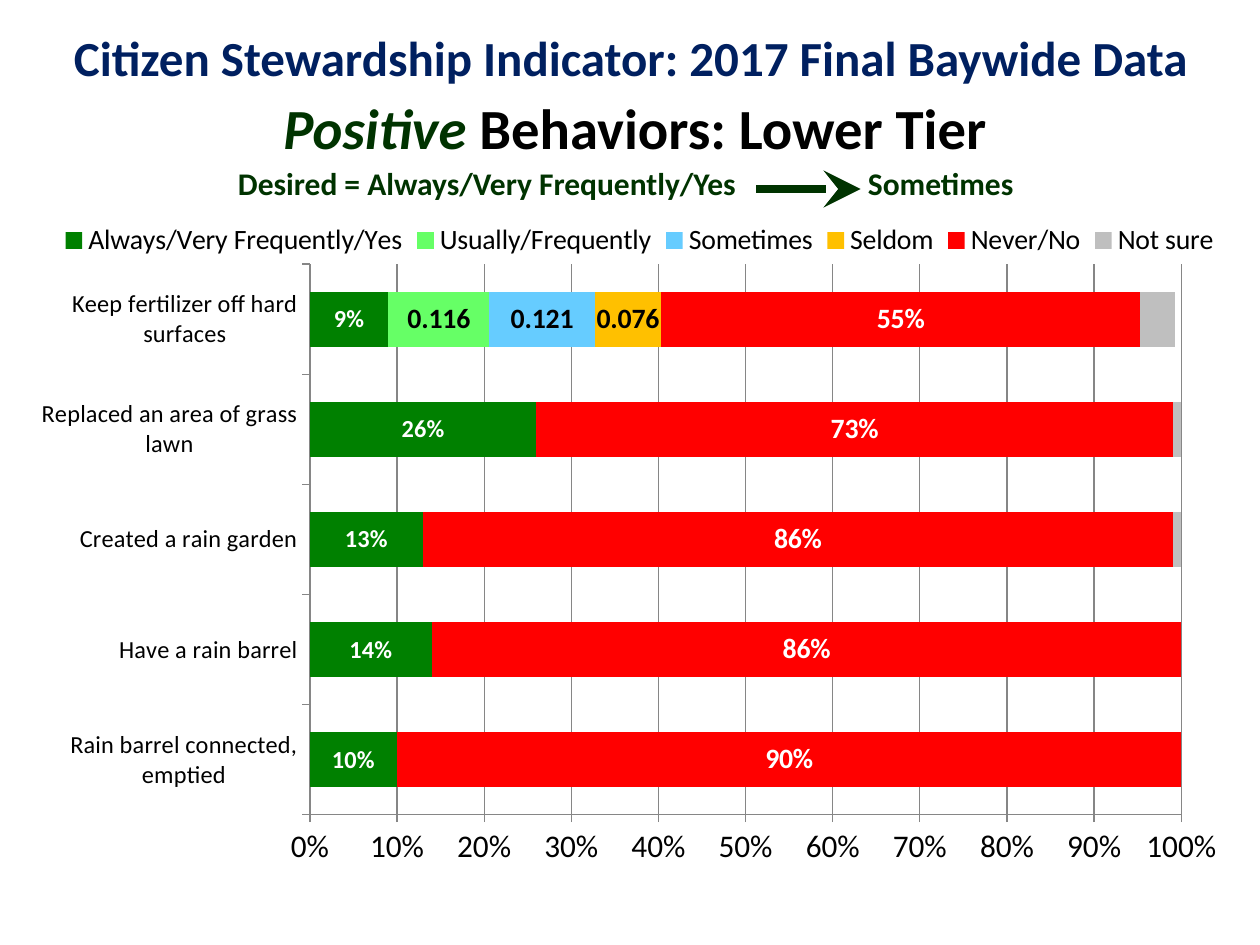
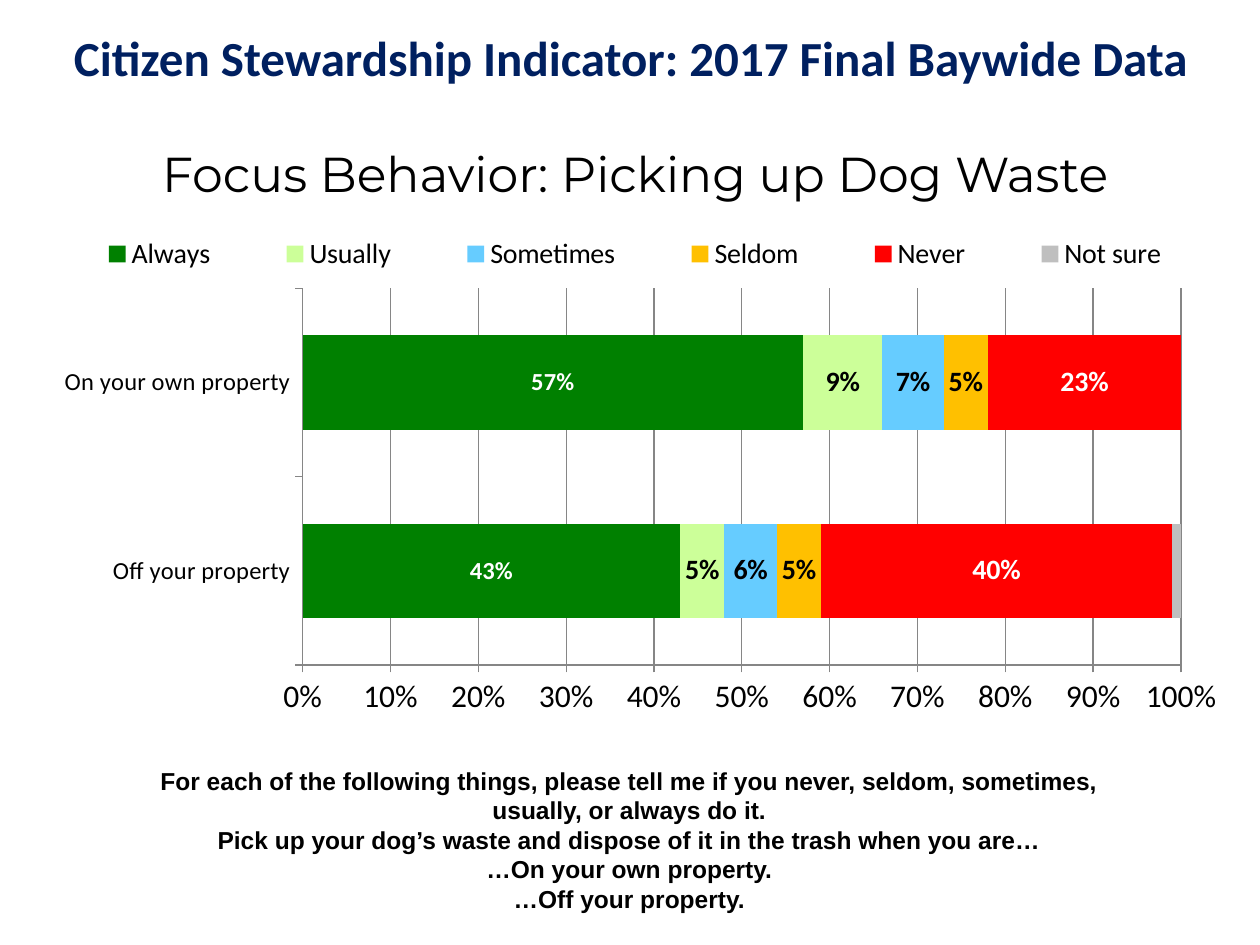
from dataclasses import dataclass

from lxml import etree
from pptx import Presentation
from pptx import util as u
from pptx.chart.chart import Chart
from pptx.chart.data import CategoryChartData
from pptx.dml.color import RGBColor
from pptx.enum import chart as ch, shapes, text
from pptx.oxml import ns
from pptx.slide import Slide

INK = {
    "black": "000000",
    "white": "FFFFFF",
    "navy": "002060",
    "pine": "003300",
    "green": "008000",
    "mint": "66FF66",
    "lime": "CCFF99",
    "sky": "66CCFF",
    "gold": "FFC000",
    "red": "FF0000",
    "gray": "BFBFBF",
    "rule": "868686",
}


@dataclass
class Run:
    words: str
    size: float
    ink: str = "black"
    face: str = "Calibri"
    bold: bool = True
    slant: bool = False


@dataclass
class Box:
    left: float
    top: float
    width: float
    height: float


@dataclass
class Label:
    size: int
    ink: str
    form: str = "0%"


@dataclass
class Series:
    name: str
    vals: list[float | None]
    ink: str
    label: Label | None = None


@dataclass
class Graph:
    box: Box
    plot: Box
    key: Box
    cats: list[str]
    rows: list[Series]


HEAD = Run("Citizen Stewardship Indicator: 2017 Final Baywide Data", 28, "navy")
LEAD = Label(14, "white")
DARK = Label(16, "black")
PLAIN = Label(16, "black", "General")
LIGHT = Label(16, "white")

TIER = Graph(
    Box(0.33, 1.67, 9.42, 5.33),
    Box(0.22, 0.08, 0.74, 0.82),
    Box(0, 0.01, 1, 0.07),
    [
        "Rain barrel connected, emptied",
        "Have a rain barrel",
        "Created a rain garden",
        "Replaced an area of grass lawn",
        "Keep fertilizer off hard surfaces",
    ],
    [
        Series("Always/Very Frequently/Yes", [0.1, 0.14, 0.13, 0.26, 0.09], "green", LEAD),
        Series("Usually/Frequently", [None] * 4 + [0.116], "mint", PLAIN),
        Series("Sometimes", [None] * 4 + [0.121], "sky", PLAIN),
        Series("Seldom", [None] * 4 + [0.076], "gold", PLAIN),
        Series("Never/No", [0.9, 0.86, 0.86, 0.73, 0.55], "red", LIGHT),
        Series("Not sure", [0, 0, 0.01, 0.01, 0.04], "gray"),
    ],
)

WASTE = Graph(
    Box(0.33, 1.7, 9.42, 4.21),
    Box(0.22, 0.14, 0.74, 0.71),
    Box(0, 0.03, 1, 0.09),
    ["Off your property", "On your own property"],
    [
        Series("Always", [0.43, 0.57], "green", LEAD),
        Series("Usually", [0.05, 0.09], "lime", DARK),
        Series("Sometimes", [0.06, 0.07], "sky", DARK),
        Series("Seldom", [0.05, 0.05], "gold", DARK),
        Series("Never", [0.4, 0.23], "red", LIGHT),
        Series("Not sure", [0.01, 0], "gray"),
    ],
)

ASK = [
    "For each of the following things, please tell me if you never, seldom, sometimes,",
    "usually, or always do it.",
    "Pick up your dog’s waste and dispose of it in the trash when you are…",
    "…On your own property.",
    "…Off your property.",
]


def tint(name: str) -> RGBColor:
    return RGBColor.from_string(INK[name])


def place(box: Box) -> list[u.Length]:
    return [u.Inches(n) for n in (box.left, box.top, box.width, box.height)]


def style(font, size: float, ink: str = "black", face: str = "Calibri", bold: bool = False) -> None:
    font.size = u.Pt(size)
    font.name = face
    font.bold = bold
    font.color.rgb = tint(ink)


def write(
    slide: Slide, box: Box, lines: list[list[Run]], mid: bool = False, stop: float | None = None
) -> None:
    shape = slide.shapes.add_textbox(*place(box))
    frame = shape.text_frame
    frame.word_wrap = True
    if mid:
        frame.vertical_anchor = text.MSO_ANCHOR.MIDDLE
    for i, line in enumerate(lines):
        para = frame.paragraphs[0] if i == 0 else frame.add_paragraph()
        para.alignment = text.PP_ALIGN.CENTER if stop is None else text.PP_ALIGN.LEFT
        for part in line:
            run = para.add_run()
            run.text = part.words
            style(run.font, part.size, part.ink, part.face, part.bold)
            run.font.italic = part.slant
    if stop is not None:
        for props in shape.element.iter(ns.qn("a:pPr")):
            tabs = etree.SubElement(props, ns.qn("a:tabLst"))
            tab = etree.SubElement(tabs, ns.qn("a:tab"))
            tab.set("pos", str(u.Inches(stop)))
            tab.set("algn", "l")


def layout(box: Box, inner: bool = False) -> etree._Element:
    root = etree.Element(ns.qn("c:layout"))
    man = etree.SubElement(root, ns.qn("c:manualLayout"))
    tags = [("layoutTarget", "inner")] if inner else []
    tags += [("xMode", "edge"), ("yMode", "edge")]
    tags += [("x", box.left), ("y", box.top), ("w", box.width), ("h", box.height)]
    for tag, val in tags:
        etree.SubElement(man, ns.qn(f"c:{tag}")).set("val", str(val))
    return root


def arrange(chart: Chart, graph: Graph) -> None:
    area = chart.element.find(".//" + ns.qn("c:plotArea"))
    key = chart.element.find(".//" + ns.qn("c:legend"))
    for node in (area, key):
        for old in node.findall(ns.qn("c:layout")):
            node.remove(old)
    area.insert(0, layout(graph.plot, True))
    key.find(ns.qn("c:legendPos")).addnext(layout(graph.key))


def draw(slide: Slide, graph: Graph) -> None:
    data = CategoryChartData(number_format="0%")
    data.categories = graph.cats
    for row in graph.rows:
        data.add_series(row.name, row.vals)
    kind = ch.XL_CHART_TYPE.BAR_STACKED
    chart = slide.shapes.add_chart(kind, *place(graph.box), data).chart
    style(chart.font, 18)
    chart.has_title = False
    chart.has_legend = True
    chart.legend.position = ch.XL_LEGEND_POSITION.TOP
    chart.legend.include_in_layout = False
    style(chart.legend.font, 16)
    plot = chart.plots[0]
    plot.gap_width = 100
    plot.overlap = 100
    plot.vary_by_categories = False
    for row, bar in zip(graph.rows, plot.series):
        bar.format.fill.solid()
        bar.format.fill.fore_color.rgb = tint(row.ink)
        if row.label:
            tag = bar.data_labels
            tag.show_value = True
            tag.position = ch.XL_LABEL_POSITION.CENTER
            tag.number_format = row.label.form
            tag.number_format_is_linked = False
            style(tag.font, row.label.size, row.label.ink, bold=True)
    cat, val = chart.category_axis, chart.value_axis
    for axis, size in ((cat, 14), (val, 18)):
        axis.major_tick_mark = ch.XL_TICK_MARK.OUTSIDE
        axis.format.line.color.rgb = tint("rule")
        style(axis.tick_labels.font, size)
    cat.has_major_gridlines = False
    val.minimum_scale = 0
    val.maximum_scale = 1
    val.major_unit = 0.1
    val.has_major_gridlines = True
    val.major_gridlines.format.line.color.rgb = tint("rule")
    val.tick_labels.number_format = "0%"
    val.tick_labels.number_format_is_linked = False
    arrange(chart, graph)


def arrow(slide: Slide, left: float, right: float, top: float) -> None:
    ends = [u.Inches(n) for n in (left, top, right, top)]
    link = slide.shapes.add_connector(shapes.MSO_CONNECTOR.STRAIGHT, *ends)
    link.line.color.rgb = tint("pine")
    link.line.width = u.Pt(4.25)
    props = link.element.spPr
    tip = etree.SubElement(props.find(ns.qn("a:ln")), ns.qn("a:tailEnd"))
    for name, val in (("type", "stealth"), ("w", "lg"), ("len", "lg")):
        tip.set(name, val)
    etree.SubElement(props, ns.qn("a:effectLst"))


def page(deck, graph: Graph, title: list[Run], top: float) -> Slide:
    slide = deck.slides.add_slide(deck.slide_layouts[6])
    draw(slide, graph)
    write(slide, Box(0.54, top, 9, 0.65), [title], True)
    write(slide, Box(0.38, 0.17, 9.25, 0.57), [[HEAD]])
    return slide


def main() -> None:
    deck = Presentation()
    deck.slide_width = u.Inches(10)
    deck.slide_height = u.Inches(7.5)

    title = [
        Run("Positive", 32.4, "pine", slant=True),
        Run(" Behaviors: Lower Tier", 32.4),
    ]
    tier = page(deck, TIER, title, 0.68)
    goal = Run("Desired = Always/Very Frequently/Yes\tSometimes", 18, "pine")
    write(tier, Box(1.79, 1.25, 6.8, 0.4), [[goal]], stop=5)
    arrow(tier, 6, 6.83, 1.5)

    title = [Run("Focus Behavior: Picking up Dog Waste", 28, face="Montserrat", bold=False)]
    waste = page(deck, WASTE, title, 1.05)
    lines = [[Run(line, 14, face="Arial")] for line in ASK]
    write(waste, Box(0.12, 6.03, 9.75, 1.28), lines)

    deck.save("out.pptx")


if __name__ == "__main__":
    main()
